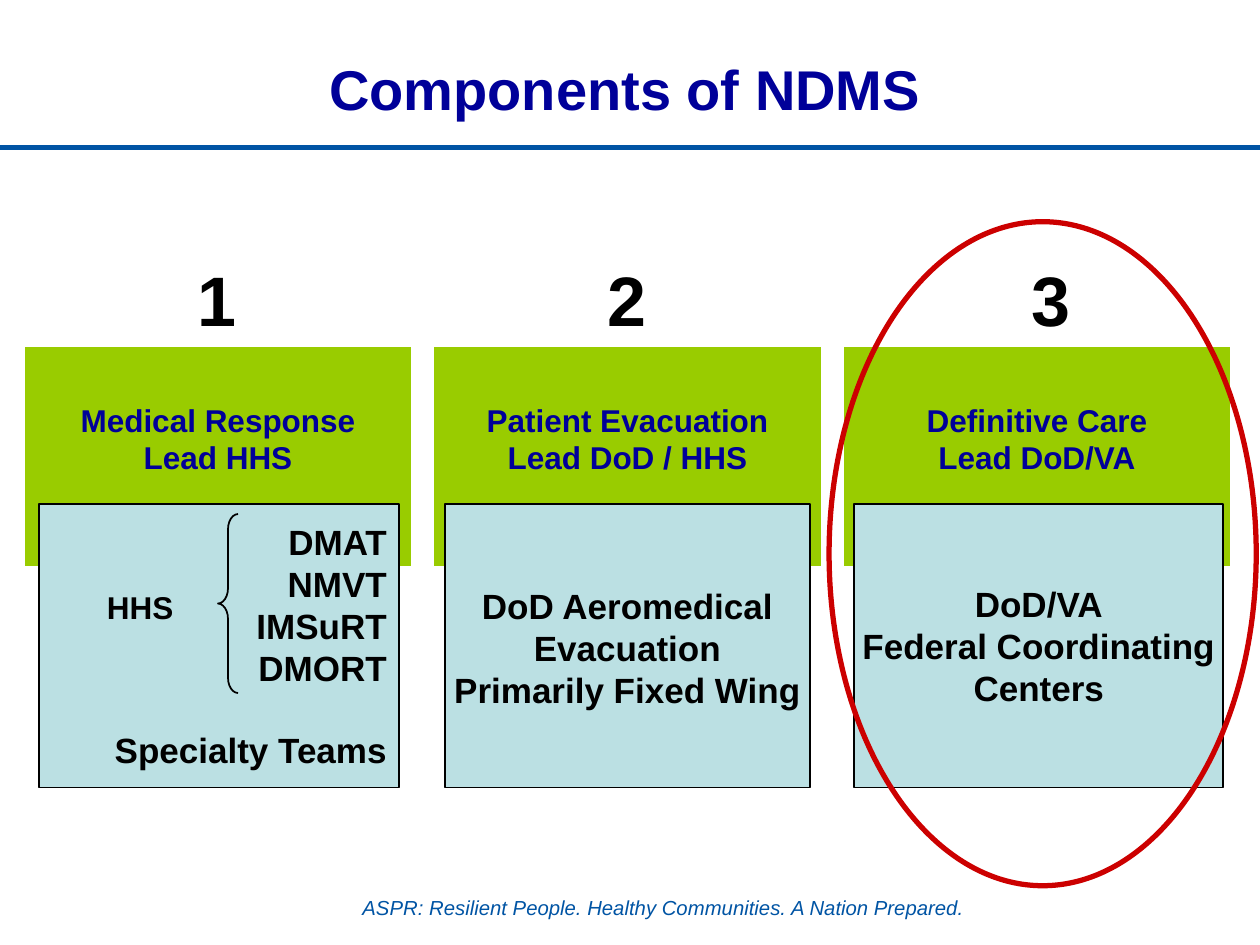
from lxml import etree
from pptx import Presentation
from pptx import util as u
from pptx.dml.color import RGBColor
from pptx.enum import shapes, text
from pptx.oxml import ns

NAVY = RGBColor(0x00, 0x00, 0x99)
BLUE = RGBColor(0x00, 0x54, 0xA4)
GREEN = RGBColor(0x99, 0xCC, 0x00)
PALE = RGBColor(0xBB, 0xE0, 0xE3)
RED = RGBColor(0xCC, 0x00, 0x00)
WHITE = RGBColor(0xFF, 0xFF, 0xFF)
BLACK = RGBColor(0x00, 0x00, 0x00)
CENTER = text.PP_ALIGN.CENTER
RIGHT = text.PP_ALIGN.RIGHT


def write(frame, lines, size=18, color=BLACK, bold=True, italic=False, align=None,
          anchor=text.MSO_ANCHOR.MIDDLE, wrap=False, inset_top=0.05, inset_bottom=0.05,
          inset_left=0.1, gap_before_last=0, baseline=0):
    """Fill a text frame with one paragraph per line."""
    frame.word_wrap = wrap
    frame.vertical_anchor = anchor
    frame.margin_top, frame.margin_bottom = u.Inches(inset_top), u.Inches(inset_bottom)
    frame.margin_left = u.Inches(inset_left)
    for index, line in enumerate(lines):
        paragraph = frame.paragraphs[0] if index == 0 else frame.add_paragraph()
        paragraph.alignment = align
        run = paragraph.add_run()
        run.text = line
        font = run.font
        font.name, font.size = "Arial", u.Pt(size)
        font.bold, font.italic = bold, italic
        font.color.rgb = color
        if baseline:
            run._r.get_or_add_rPr().set("baseline", str(baseline * 1000))
    if gap_before_last:
        paragraph.space_before = u.Pt(gap_before_last)


class Deck:
    """Holds the style and the current slide."""

    def __init__(self):
        self.show = Presentation()
        self.show.slide_width, self.show.slide_height = u.Inches(10), u.Inches(7.5)
        self.slide = self.show.slides.add_slide(self.show.slide_layouts[5])

    def title(self, words, left, top, width, height):
        """Place and format the title placeholder."""
        title = self.slide.shapes.title
        title.left, title.top = u.Inches(left), u.Inches(top)
        title.width, title.height = u.Inches(width), u.Inches(height)
        write(title.text_frame, [words], size=32, color=NAVY, align=CENTER, wrap=True)

    def shape(self, kind, left, top, width, height, line, weight=1, fill=None):
        """Add a preset shape with an outline and an optional fill."""
        shape = self.slide.shapes.add_shape(
            kind, u.Inches(left), u.Inches(top), u.Inches(width), u.Inches(height))
        shape.shadow.inherit = False
        if fill is None:
            shape.fill.background()
        else:
            shape.fill.solid()
            shape.fill.fore_color.rgb = fill
        shape.line.color.rgb = line
        shape.line.width = u.Pt(weight)
        return shape

    def label(self, words, left, top, width, height, **style):
        """Add a text box."""
        box = self.slide.shapes.add_textbox(
            u.Inches(left), u.Inches(top), u.Inches(width), u.Inches(height))
        write(box.text_frame, [words], anchor=text.MSO_ANCHOR.TOP, **style)

    def rule(self, y):
        """Add a full-width horizontal line."""
        rule = self.slide.shapes.add_connector(
            shapes.MSO_CONNECTOR.STRAIGHT, 0, u.Inches(y), u.Inches(10), u.Inches(y))
        rule.line.color.rgb = BLUE
        rule.line.width = u.Pt(3)
        etree.SubElement(rule._element.spPr, ns.qn("a:effectLst"))


def main():
    """Build the slide and save it."""
    deck = Deck()
    kinds = shapes.MSO_SHAPE
    deck.rule(1.17)
    deck.label("ASPR: Resilient People. Healthy Communities. A Nation Prepared.",
               0.53, 7.02, 8.97, 0.44, size=20, color=BLUE, bold=False, italic=True,
               align=CENTER, wrap=True, inset_left=0.6, baseline=30)
    deck.title("Components of NDMS", 1.1, 0.23, 7.72, 0.94)

    headings = [["Medical Response", "Lead HHS"],
                ["Patient Evacuation", "Lead DoD / HHS"],
                ["Definitive Care", "Lead DoD/VA"]]
    for column, heading in enumerate(headings):
        header = deck.shape(kinds.RECTANGLE, 0.19 + 3.25 * column, 2.75, 3.08, 1.75,
                            WHITE, fill=GREEN)
        write(header.text_frame, heading, color=NAVY, align=CENTER, inset_bottom=0.34)

    details = [
        (0.31, 2.86, ["DMAT", "NMVT", "IMSuRT", "DMORT", "Specialty Teams"],
         dict(align=RIGHT, wrap=True, gap_before_last=23)),
        (3.53, 2.9, ["DoD Aeromedical", "Evacuation", "Primarily Fixed Wing"],
         dict(align=CENTER, inset_top=0.08)),
        (6.78, 2.93, ["DoD/VA", "Federal Coordinating", "Centers"], dict(align=CENTER)),
    ]
    for left, width, lines, style in details:
        panel = deck.shape(kinds.RECTANGLE, left, 4, width, 2.25, BLACK, fill=PALE)
        write(panel.text_frame, lines, size=20, **style)

    brace = deck.shape(kinds.LEFT_BRACE, 1.73, 4.08, 0.16, 1.42, BLACK)
    brace.adjustments[0] = 0.76
    deck.label("HHS", 0.75, 4.62, 0.76, 0.4)

    for number, left, width in [("1", 1.47, 0.42), ("2", 4.72, 0.46), ("3", 8.09, 0.46)]:
        deck.label(number, left, 1.99, width, 0.77, size=40)

    deck.shape(kinds.OVAL, 6.58, 1.76, 3.39, 5.27, RED, weight=3)
    deck.show.save("out.pptx")


if __name__ == "__main__":
    main()
